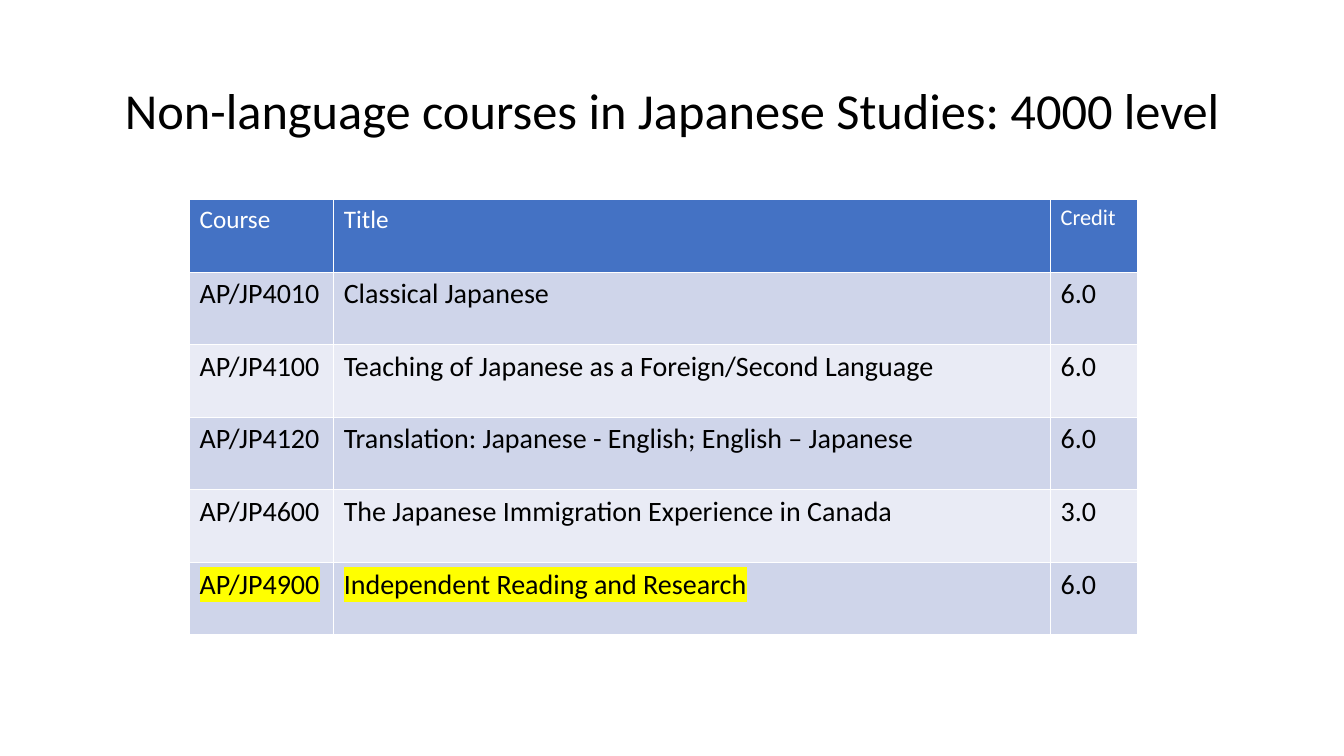
from lxml import etree
from pptx import Presentation
from pptx import util as u
from pptx.dml.color import RGBColor
from pptx.enum import text
from pptx.oxml import ns

BLACK = RGBColor(0x00, 0x00, 0x00)
WHITE = RGBColor(0xFF, 0xFF, 0xFF)
BLUE = RGBColor(0x44, 0x72, 0xC4)
BANDS = [RGBColor(0xCF, 0xD5, 0xEA), RGBColor(0xE9, 0xEB, 0xF5)]
YELLOW = RGBColor(0xFF, 0xFF, 0x00)

FONT = "Calibri"
COLS = [1.43, 7.11, 0.86]
ROW = 0.72
HEAD = [("Course", 18), ("Title", 18), ("Credit", 16)]
COURSES = [
    ("AP/JP4010", "Classical Japanese", "6.0"),
    ("AP/JP4100", "Teaching of Japanese as a Foreign/Second Language", "6.0"),
    ("AP/JP4120", "Translation: Japanese - English; English – Japanese", "6.0"),
    ("AP/JP4600", "The Japanese Immigration Experience in Canada", "3.0"),
    ("AP/JP4900", "Independent Reading and Research", "6.0"),
]
MARKED = {"AP/JP4900", "Independent Reading and Research"}


def style(frame, size, color):
    run = frame.paragraphs[0].runs[0]
    run.font.name = FONT
    run.font.size = u.Pt(size)
    run.font.bold = False
    run.font.color.rgb = color
    return run


def mark(run):
    latin = run.font._element.find(ns.qn("a:latin"))
    light = etree.Element(ns.qn("a:highlight"))
    etree.SubElement(light, ns.qn("a:srgbClr"), val=str(YELLOW))
    latin.addprevious(light)


def add_title(slide, words):
    title = slide.shapes.title
    title.left, title.top = u.Inches(0.92), u.Inches(0.4)
    title.width, title.height = u.Inches(11.5), u.Inches(1.45)
    frame = title.text_frame
    frame.text = words
    frame.word_wrap = True
    frame.auto_size = text.MSO_AUTO_SIZE.NONE
    frame.vertical_anchor = text.MSO_ANCHOR.MIDDLE
    frame.paragraphs[0].alignment = text.PP_ALIGN.CENTER
    frame.paragraphs[0].line_spacing = 0.9
    style(frame, 36, BLACK)


def fill_cell(cell, words, size, color, back):
    cell.fill.solid()
    cell.fill.fore_color.rgb = back
    cell.text_frame.text = words
    run = style(cell.text_frame, size, color)
    if words in MARKED:
        mark(run)


def add_courses(slide):
    count = len(COURSES) + 1
    table = slide.shapes.add_table(
        count, len(COLS), u.Inches(1.88), u.Inches(1.98),
        u.Inches(sum(COLS)), u.Inches(ROW * count)).table
    for col, width in zip(table.columns, COLS):
        col.width = u.Inches(width)
    for c, (words, size) in enumerate(HEAD):
        fill_cell(table.cell(0, c), words, size, WHITE, BLUE)
    for r, course in enumerate(COURSES):
        for c, words in enumerate(course):
            fill_cell(table.cell(r + 1, c), words, 20, BLACK, BANDS[r % 2])


def main():
    prs = Presentation()
    prs.slide_width, prs.slide_height = u.Inches(13.33), u.Inches(7.5)
    slide = prs.slides.add_slide(prs.slide_layouts.get_by_name("Title Only"))
    add_title(slide, "Non-language courses in Japanese Studies: 4000 level")
    add_courses(slide)
    prs.save("out.pptx")


if __name__ == "__main__":
    main()
